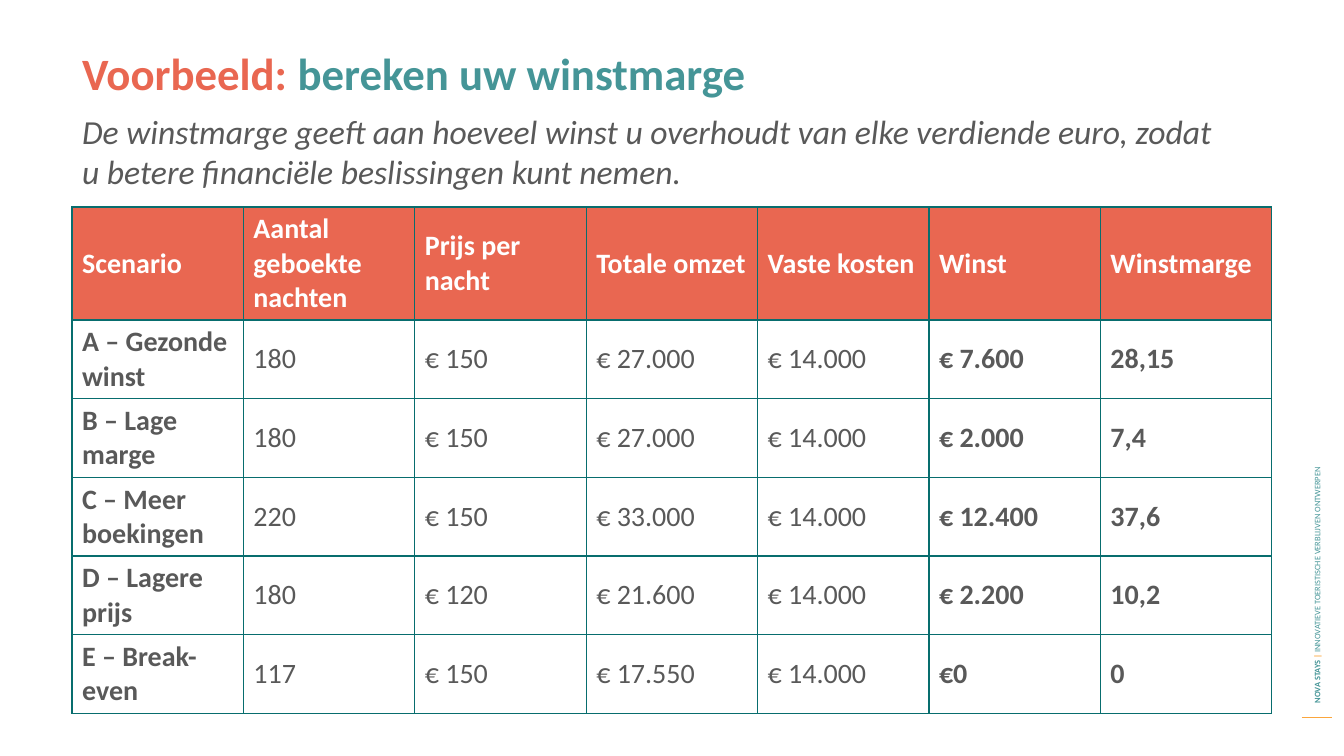
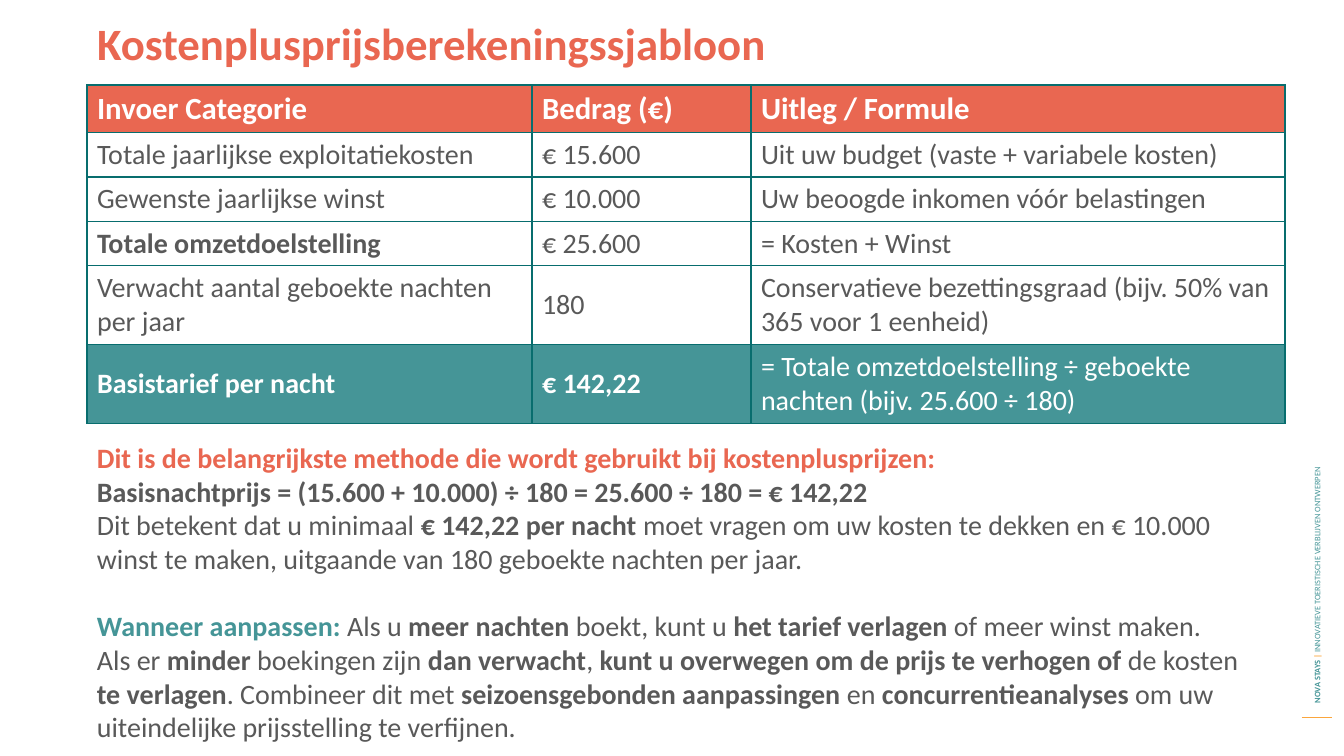
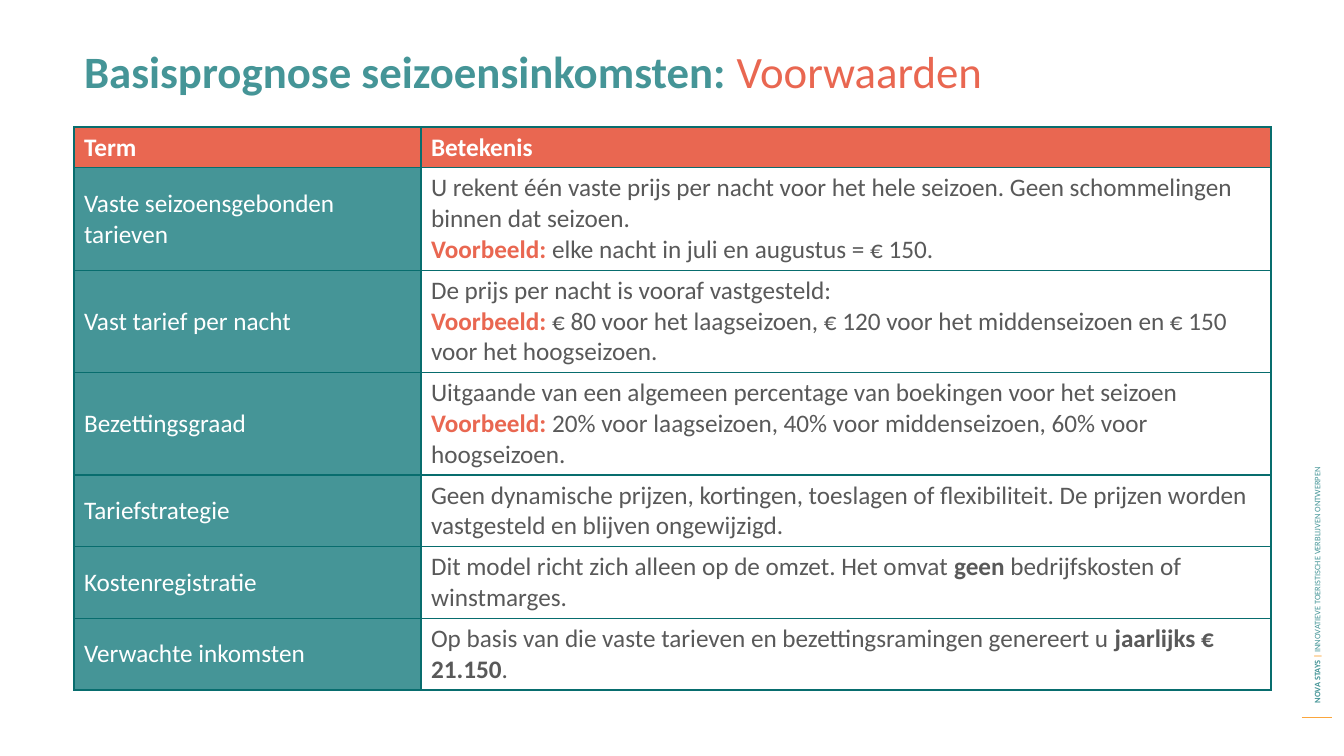
from lxml import etree
from pptx import Presentation
from pptx import util as u
from pptx.dml.color import RGBColor
from pptx.enum import shapes, text
from pptx.oxml.ns import qn

SCALE = 12192000 / 1344  # EMU per px
FONT = "Calibri"
CORAL, TEAL, DARK, WHITE = "E96751", "459597", "595959", "FFFFFF"
BORDER, ORANGE, AMBER = "086D6E", "FBA63D", "FBA63B"
TITLE_ONLY, TITLE_AND_BODY = 5, 1

# Run styles: colour (None keeps the colour of the box) and bold
STYLES = {
    "bold": (None, True),
    "plain": (None, False),
    "coral": (CORAL, True),
    "coral light": (CORAL, False),
    "teal": (TEAL, True),
    "teal light": (TEAL, False),
    "amber": (AMBER, True),
}

# Content: a paragraph is a string or a list of runs; a run is a string or (text, style)
FOOTER = [("NOVA STAYS ", "teal"), ("| ", "amber"),
          ("INNOVATIEVE TOERISTISCHE VERBLIJVEN ONTWERPEN", "teal light")]

EXAMPLE = ("Voorbeeld: ", "coral")

SLIDES = [
    {
        "title": [("Voorbeeld: ", "coral"), ("bereken uw winstmarge", "teal")],
        "title_at": (72, 41),
        "subtitle": "De winstmarge geeft aan hoeveel winst u overhoudt van elke verdiende euro, "
                    "zodat u betere financiële beslissingen kunt nemen.",
        "table": {
            "at": (72, 207), "columns": [1200 / 7] * 7, "rows": [112] + [78] * 5,
            "header_size": 20, "size": 20, "bold_columns": (0, 5, 6),
            "cells": [
                ("Scenario", "Aantal geboekte nachten", "Prijs per nacht", "Totale omzet",
                 "Vaste kosten", "Winst", "Winstmarge"),
                ("A – Gezonde winst", "180", "€ 150", "€ 27.000", "€ 14.000", "€ 7.600", "28,15"),
                ("B – Lage marge", "180", "€ 150", "€ 27.000", "€ 14.000", "€ 2.000", "7,4"),
                ("C – Meer boekingen", "220", "€ 150", "€ 33.000", "€ 14.000", "€ 12.400", "37,6"),
                ("D – Lagere prijs", "180", "€ 120", "€ 21.600", "€ 14.000", "€ 2.200", "10,2"),
                ("E – Break-even", "117", "€ 150", "€ 17.550", "€ 14.000", "€0", "0"),
            ],
        },
    },
    {
        "title": [("Kostenplusprijsberekeningssjabloon", "coral")],
        "title_at": (87, 11),
        "table": {
            "at": (87, 85), "columns": [445, 219, 534], "rows": [46, 43, 43, 43, 77, 77],
            "header_size": 22, "size": 20, "teal_rows": (5,),
            "cells": [
                ("Invoer Categorie", "Bedrag (€)", "Uitleg / Formule"),
                ("Totale jaarlijkse exploitatiekosten", "€ 15.600",
                 "Uit uw budget (vaste + variabele kosten)"),
                ("Gewenste jaarlijkse winst", "€ 10.000", "Uw beoogde inkomen vóór belastingen"),
                ([[("Totale omzetdoelstelling", "bold")]], "€ 25.600", "= Kosten + Winst"),
                ("Verwacht aantal geboekte nachten per jaar", "180",
                 "Conservatieve bezettingsgraad (bijv. 50% van 365 voor 1 eenheid)"),
                ([[("Basistarief per nacht", "bold")]], [[("€ 142,22", "bold")]],
                 "= Totale omzetdoelstelling ÷ geboekte nachten (bijv. 25.600 ÷ 180)"),
            ],
        },
        "explanation": [
            [("Dit is de belangrijkste methode die wordt gebruikt bij kostenplusprijzen:", "coral")],
            [("Basisnachtprijs = (15.600 + 10.000) ÷ 180 = 25.600 ÷ 180 = € 142,22", "bold")],
            ["Dit betekent dat u minimaal ", ("€ 142,22 per nacht ", "bold"),
             "moet vragen om uw kosten te dekken en € 10.000 winst te maken, "
             "uitgaande van 180 geboekte nachten per jaar."],
            [("Wanneer aanpassen: ", "teal"), "Als u ", ("meer nachten ", "bold"),
             "boekt, kunt u ", ("het tarief verlagen ", "bold"), "of meer winst maken."],
            ["Als er ", ("minder", "bold"), " boekingen zijn ", ("dan verwacht", "bold"), ", ",
             ("kunt u overwegen om de prijs te verhogen of ", "bold"), "de kosten ",
             ("te verlagen", "bold"), ". Combineer dit met ",
             ("seizoensgebonden aanpassingen ", "bold"), "en ",
             ("concurrentieanalyses ", "bold"),
             "om uw uiteindelijke prijsstelling te verfijnen."],
        ],
    },
    {
        "title": [("Basisprognose seizoensinkomsten: ", "teal"), ("Voorwaarden", "coral light")],
        "title_at": (74, 39),
        "table": {
            "at": (74, 127), "columns": [347, 850], "rows": [40] + [102] * 3 + [71] * 3,
            "header_size": 18, "size": 18, "teal_columns": (0,),
            "cells": [
                ("Term", "Betekenis"),
                ("Vaste seizoensgebonden tarieven",
                 ["U rekent één vaste prijs per nacht voor het hele seizoen. "
                  "Geen schommelingen binnen dat seizoen.",
                  [EXAMPLE, "elke nacht in juli en augustus = € 150."]]),
                ("Vast tarief per nacht",
                 ["De prijs per nacht is vooraf vastgesteld:",
                  [EXAMPLE, "€ 80 voor het laagseizoen, € 120 voor het middenseizoen "
                            "en € 150 voor het hoogseizoen."]]),
                ("Bezettingsgraad",
                 ["Uitgaande van een algemeen percentage van boekingen voor het seizoen",
                  [EXAMPLE, "20% voor laagseizoen, 40% voor middenseizoen, "
                            "60% voor hoogseizoen."]]),
                ("Tariefstrategie",
                 "Geen dynamische prijzen, kortingen, toeslagen of flexibiliteit. "
                 "De prijzen worden vastgesteld en blijven ongewijzigd."),
                ("Kostenregistratie",
                 [["Dit model richt zich alleen op de omzet. Het omvat ", ("geen ", "bold"),
                   "bedrijfskosten of winstmarges."]]),
                ("Verwachte inkomsten",
                 [["Op basis van die vaste tarieven en bezettingsramingen genereert u ",
                   ("jaarlijks € 21.150", "bold"), "."]]),
            ],
        },
    },
]


def px(length):
    return u.Emu(round(length * SCALE))


def rgb(value):
    return RGBColor.from_string(value)


def write(frame, paragraphs, size, color=DARK, bold=False, italic=False):
    """Fill a text frame with paragraphs of styled runs."""
    if isinstance(paragraphs, str):
        paragraphs = [paragraphs]
    for index, runs in enumerate(paragraphs):
        paragraph = frame.add_paragraph() if index else frame.paragraphs[0]
        paragraph.alignment = text.PP_ALIGN.LEFT
        paragraph.space_before = u.Pt(0)
        for item in [runs] if isinstance(runs, str) else runs:
            words, style = (item, None) if isinstance(item, str) else item
            run_color, run_bold = STYLES[style] if style else (None, bold)
            run = paragraph.add_run()
            run.text = words
            run.font.name, run.font.size = FONT, u.Pt(size)
            run.font.bold, run.font.italic = run_bold, italic
            run.font.color.rgb = rgb(run_color or color)


def fill_placeholder(shape, left, top, paragraphs, size, **style):
    shape.left, shape.top, shape.width, shape.height = map(px, (left, top, 1170, 89))
    frame = shape.text_frame
    frame.word_wrap = True
    frame.auto_size = text.MSO_AUTO_SIZE.NONE
    frame.vertical_anchor = text.MSO_ANCHOR.TOP
    properties = frame.paragraphs[0]._p.get_or_add_pPr()
    properties.set("marL", "0")
    properties.set("indent", "0")
    etree.SubElement(properties, qn("a:buNone"))
    write(frame, paragraphs, size, **style)


def add_text(slide, box, paragraphs, size):
    shape = slide.shapes.add_textbox(*map(px, box))
    shape.text_frame.word_wrap = True
    shape.text_frame.vertical_anchor = text.MSO_ANCHOR.MIDDLE
    write(shape.text_frame, paragraphs, size)
    return shape


def set_borders(cell):
    properties = cell._tc.get_or_add_tcPr()
    for position, side in enumerate(("lnL", "lnR", "lnT", "lnB")):
        line = etree.Element(qn("a:" + side), w=str(u.Pt(1)))
        fill = etree.SubElement(line, qn("a:solidFill"))
        etree.SubElement(fill, qn("a:srgbClr"), val=BORDER)
        properties.insert(position, line)


def add_table(slide, spec):
    columns, rows = spec["columns"], spec["rows"]
    table = slide.shapes.add_table(
        len(rows), len(columns), *map(px, (*spec["at"], sum(columns), sum(rows)))).table
    table.first_row = table.horz_banding = False
    for column, width in zip(table.columns, columns):
        column.width = px(width)
    for row, height in zip(table.rows, rows):
        row.height = px(height)
    for r, row_cells in enumerate(spec["cells"]):
        for c, content in enumerate(row_cells):
            cell = table.cell(r, c)
            header = r == 0
            teal = r in spec.get("teal_rows", ()) or c in spec.get("teal_columns", ())
            if header or teal:
                cell.fill.solid()
                cell.fill.fore_color.rgb = rgb(CORAL if header else TEAL)
            else:
                cell.fill.background()
            set_borders(cell)
            cell.vertical_anchor = text.MSO_ANCHOR.MIDDLE
            write(cell.text_frame, content, spec["header_size"] if header else spec["size"],
                  color=WHITE if header or teal else DARK,
                  bold=header or c in spec.get("bold_columns", ()))


def add_footer(presentation, slide):
    """Draw the side footer and move it to the master, so that all slides share it."""
    line = slide.shapes.add_connector(
        shapes.MSO_CONNECTOR.STRAIGHT, *map(px, (1302, 718, 1332, 718)))
    line.line.color.rgb = rgb(ORANGE)
    line.line.width = u.Pt(0.75)
    etree.SubElement(line._element.spPr, qn("a:effectLst"))
    label = add_text(slide, (1026, 412, 582, 20), [FOOTER], 6)
    label.rotation = 270
    for shape in (line, label):
        presentation.slide_master.shapes.element.append(shape.element)


def main():
    presentation = Presentation()
    presentation.slide_width, presentation.slide_height = px(1344), px(756)
    for number, content in enumerate(SLIDES):
        layout = TITLE_AND_BODY if "subtitle" in content else TITLE_ONLY
        slide = presentation.slides.add_slide(presentation.slide_layouts[layout])
        if number == 0:
            add_footer(presentation, slide)
        left, top = content["title_at"]
        fill_placeholder(slide.shapes.title, left, top, [content["title"]], 32)
        if "subtitle" in content:
            fill_placeholder(slide.placeholders[1], left, top + 65, content["subtitle"], 24,
                             italic=True)
        add_table(slide, content["table"])
        if "explanation" in content:
            box = add_text(slide, (87, 434, 1178, 316), content["explanation"], 20)
            box.text_frame.paragraphs[3].space_before = u.Pt(24)
    presentation.save("out.pptx")


if __name__ == "__main__":
    main()
